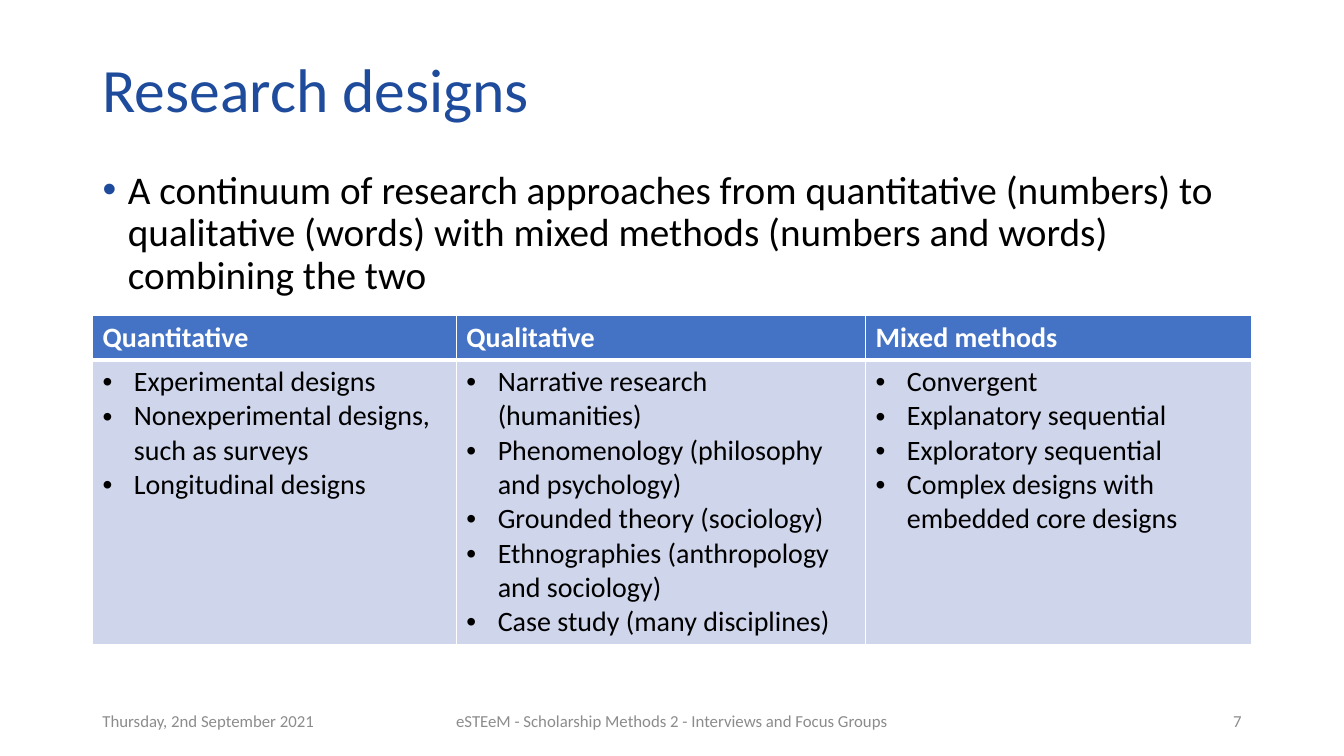
from dataclasses import dataclass

import lxml.etree
import pptx
import pptx.dml.color
import pptx.enum.text
import pptx.oxml.ns
import pptx.util

Cm = pptx.util.Cm
Pt = pptx.util.Pt
ALIGN = pptx.enum.text.PP_ALIGN
ANCHOR = pptx.enum.text.MSO_ANCHOR

FONT = "Calibri"
COLOURS = {
    "heading": "1E4B9B",
    "text": "000000",
    "footer": "8C8C8C",
    "white": "FFFFFF",
    "header_fill": "4472C4",
    "body_fill": "CFD5EA",
}
LEFT, WIDTH = 2.33, 29.21
FOOTER_TOP, FOOTER_HEIGHT = 17.66, 1.01
THIN, THICK = 1, 3


@dataclass
class FooterPart:
    text: str
    left: float
    width: float
    alignment: ALIGN


@dataclass
class DesignFamily:
    heading: str
    width: float
    designs: list[str]


FOOTER = [
    FooterPart("Thursday, 2nd September 2021", LEFT, 7.62, ALIGN.LEFT),
    FooterPart("eSTEeM - Scholarship Methods 2 - Interviews and Focus Groups",
               11.22, 11.43, ALIGN.CENTER),
    FooterPart("7", 23.92, 7.62, ALIGN.RIGHT),
]

FAMILIES = [
    DesignFamily("Quantitative", 9.17, [
        "Experimental designs",
        "Nonexperimental designs, such as surveys",
        "Longitudinal designs",
    ]),
    DesignFamily("Qualitative", 10.31, [
        "Narrative research (humanities)",
        "Phenomenology (philosophy and psychology)",
        "Grounded theory (sociology)",
        "Ethnographies (anthropology and sociology)",
        "Case study (many disciplines)",
    ]),
    DesignFamily("Mixed methods", 9.73, [
        "Convergent",
        "Explanatory sequential",
        "Exploratory sequential",
        "Complex designs with embedded core designs",
    ]),
]


def rgb(colour: str) -> pptx.dml.color.RGBColor:
    return pptx.dml.color.RGBColor.from_string(COLOURS[colour])


def add_child(parent, tag: str, **attributes: str):
    return lxml.etree.SubElement(parent, pptx.oxml.ns.qn(tag), attributes)


def add_run(paragraph, text: str, size: float, colour: str, bold: bool = False) -> None:
    run = paragraph.add_run()
    run.text = text
    run.font.name = FONT
    run.font.size = Pt(size)
    run.font.bold = bold
    run.font.color.rgb = rgb(colour)


def add_bullet(paragraph, indent: float, colour: str) -> None:
    """Give the paragraph a round bullet hanging by indent centimetres."""
    properties = paragraph._p.get_or_add_pPr()
    properties.set("marL", str(Cm(indent)))
    properties.set("indent", str(-Cm(indent)))
    bullet_colour = add_child(properties, "a:buClr")
    add_child(bullet_colour, "a:srgbClr", val=COLOURS[colour])
    add_child(properties, "a:buFont", typeface="Arial")
    add_child(properties, "a:buChar", char="•")


def format_cell(cell, fill: str, top: float, bottom: float) -> None:
    """Fill the cell and draw its white borders, top and bottom in points."""
    properties = cell._tc.get_or_add_tcPr()
    widths = {"a:lnL": THIN, "a:lnR": THIN, "a:lnT": top, "a:lnB": bottom}
    for tag, width in widths.items():
        border = add_child(properties, tag, w=str(Pt(width)))
        add_child(add_child(border, "a:solidFill"), "a:srgbClr", val=COLOURS["white"])
    cell.fill.solid()
    cell.fill.fore_color.rgb = rgb(fill)


def place(shape, left: float, top: float, width: float, height: float) -> None:
    shape.left, shape.top = Cm(left), Cm(top)
    shape.width, shape.height = Cm(width), Cm(height)


def add_title(slide) -> None:
    title = slide.shapes.title
    place(title, LEFT, 1.01, WIDTH, 2.65)
    title.text_frame.auto_size = pptx.enum.text.MSO_AUTO_SIZE.NONE
    title.text_frame.vertical_anchor = ANCHOR.MIDDLE
    paragraph = title.text_frame.paragraphs[0]
    paragraph.alignment = ALIGN.LEFT
    paragraph.line_spacing = 0.9
    add_run(paragraph, "Research designs", 44, "heading")


def add_summary(slide) -> None:
    summary = slide.placeholders[1]
    place(summary, LEFT, 4.17, WIDTH, 13)
    summary.text_frame.auto_size = pptx.enum.text.MSO_AUTO_SIZE.NONE
    paragraph = summary.text_frame.paragraphs[0]
    add_bullet(paragraph, 0.64, "heading")
    paragraph.line_spacing = 0.9
    paragraph.space_before = Pt(0)
    add_run(paragraph,
            "A continuum of research approaches from quantitative (numbers) to "
            "qualitative (words) with mixed methods (numbers and words) "
            "combining the two", 28, "text")


def add_designs_table(slide, families: list[DesignFamily]) -> None:
    header_height, body_height = 1.1, 7.13
    designs_table = slide.shapes.add_table(
        2, len(families), Cm(LEFT), Cm(7.95), Cm(WIDTH),
        Cm(header_height + body_height)).table
    designs_table.rows[0].height = Cm(header_height)
    designs_table.rows[1].height = Cm(body_height)
    for column, family in enumerate(families):
        designs_table.columns[column].width = Cm(family.width)
        header, body = (designs_table.cell(row, column) for row in range(2))
        format_cell(header, "header_fill", THIN, THICK)
        format_cell(body, "body_fill", THICK, THIN)
        add_run(header.text_frame.paragraphs[0], family.heading, 20, "white", bold=True)
        for index, design in enumerate(family.designs):
            frame = body.text_frame
            paragraph = frame.add_paragraph() if index else frame.paragraphs[0]
            add_bullet(paragraph, 0.79, "text")
            add_run(paragraph, design, 20, "text")


def add_footer_part(slide, part: FooterPart) -> None:
    box = slide.shapes.add_textbox(
        Cm(part.left), Cm(FOOTER_TOP), Cm(part.width), Cm(FOOTER_HEIGHT))
    box.text_frame.word_wrap = True
    box.text_frame.vertical_anchor = ANCHOR.MIDDLE
    paragraph = box.text_frame.paragraphs[0]
    paragraph.alignment = part.alignment
    add_run(paragraph, part.text, 12, "footer")


def main() -> None:
    presentation = pptx.Presentation()
    presentation.slide_width, presentation.slide_height = Cm(33.87), Cm(19.05)
    slide = presentation.slides.add_slide(presentation.slide_layouts[1])
    add_title(slide)
    add_summary(slide)
    add_designs_table(slide, FAMILIES)
    for part in FOOTER:
        add_footer_part(slide, part)
    presentation.save("out.pptx")


if __name__ == "__main__":
    main()
